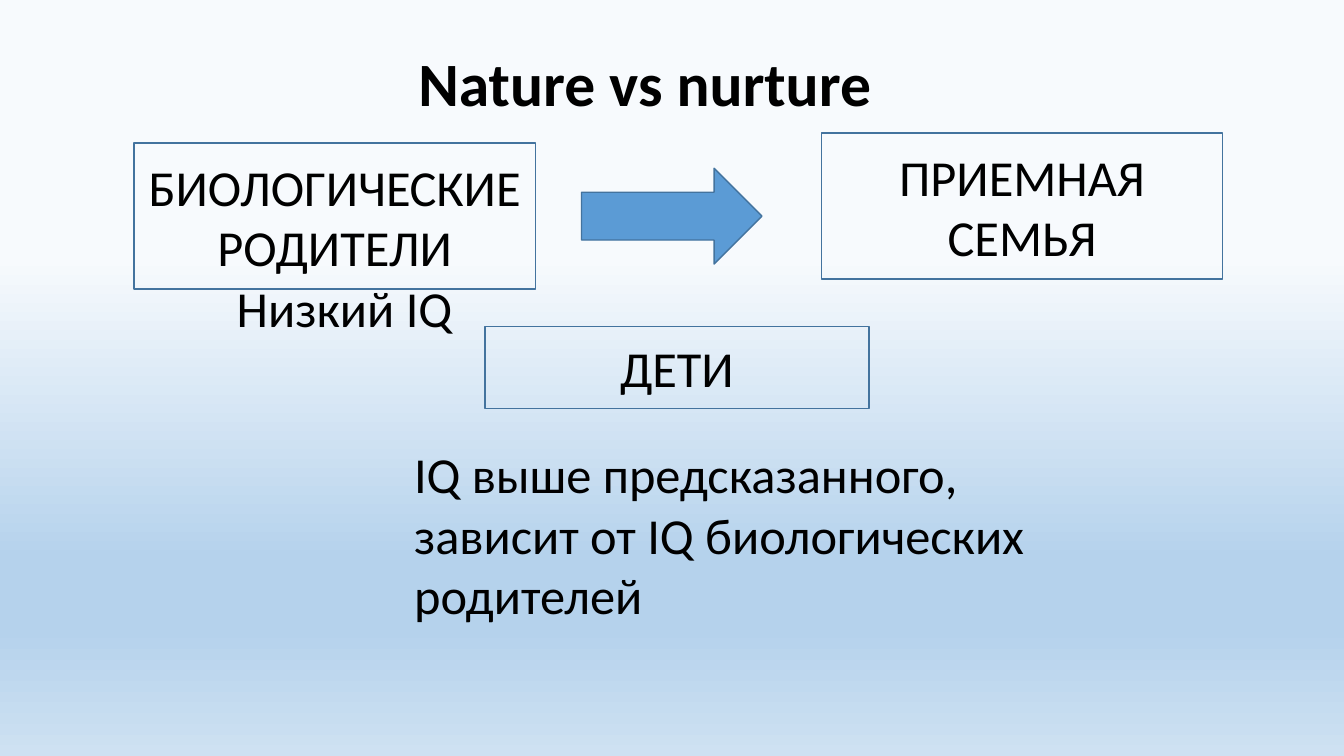
from dataclasses import dataclass

from lxml.etree import SubElement
from pptx import Presentation
from pptx.dml.color import RGBColor
from pptx.enum.shapes import MSO_SHAPE
from pptx.enum.text import MSO_ANCHOR, PP_ALIGN
from pptx.oxml.ns import qn
from pptx.util import Pt


@dataclass(frozen=True)
class Theme:
    font: str = "Calibri"
    title_size: int = 44
    body_size: int = 36
    ink: str = "000000"
    accent: str = "5B9BD5"
    outline: str = "43739E"
    sky: tuple = ((34, "F7FAFD"), (74, "B5D2EC"), (83, "B5D2EC"), (100, "CEE1F2"))


THEME = Theme()


def paint_background(slide):
    fill = slide.background.fill
    fill.gradient()
    fill.gradient_angle = 270
    stops = next(slide.element.iter(qn("a:gsLst")))
    for stop in list(stops):
        stops.remove(stop)
    for percent, color in THEME.sky:
        stop = SubElement(stops, qn("a:gs"), pos=str(percent * 1000))
        SubElement(stop, qn("a:srgbClr"), val=color)


def write(frame, text, size, align, anchor, bold=False):
    frame.word_wrap = True
    frame.vertical_anchor = anchor
    paragraph = frame.paragraphs[0]
    paragraph.text = text
    paragraph.alignment = align
    font = paragraph.font
    font.name = THEME.font
    font.size = Pt(size)
    font.bold = bold
    font.color.rgb = RGBColor.from_string(THEME.ink)
    return paragraph


def add_label(slide, text, bounds, size=THEME.body_size, align=PP_ALIGN.LEFT,
              anchor=MSO_ANCHOR.TOP, bold=False):
    label = slide.shapes.add_textbox(*map(Pt, bounds))
    return write(label.text_frame, text, size, align, anchor, bold)


def add_outlined(slide, preset, bounds):
    outlined = slide.shapes.add_shape(preset, *map(Pt, bounds))
    outlined.shadow.inherit = False
    outlined.fill.background()
    outlined.line.color.rgb = RGBColor.from_string(THEME.outline)
    outlined.line.width = Pt(1)
    return outlined


def add_group_box(slide, text, bounds):
    box = add_outlined(slide, MSO_SHAPE.RECTANGLE, bounds)
    write(box.text_frame, text, THEME.body_size, PP_ALIGN.CENTER, MSO_ANCHOR.MIDDLE)


def add_arrow(slide, bounds):
    arrow = add_outlined(slide, MSO_SHAPE.RIGHT_ARROW, bounds)
    arrow.fill.solid()
    arrow.fill.fore_color.rgb = RGBColor.from_string(THEME.accent)


def main():
    presentation = Presentation()
    presentation.slide_width = Pt(960)
    presentation.slide_height = Pt(540)
    slide = presentation.slides.add_slide(presentation.slide_layouts[6])
    paint_background(slide)

    title = add_label(slide, "Nature vs nurture", (46.8, 15.1, 828, 93.6),
                      THEME.title_size, PP_ALIGN.CENTER, MSO_ANCHOR.MIDDLE, True)
    title.line_spacing = 0.9

    add_arrow(slide, (415.4, 120.2, 128.9, 68.4))
    add_label(slide, "Низкий IQ", (162, 194.4, 188.6, 51.1))
    add_group_box(slide, "БИОЛОГИЧЕСКИЕ РОДИТЕЛИ", (95.8, 102.2, 286.6, 104.4))
    add_group_box(slide, "ДЕТИ", (346.3, 233.3, 274.3, 58.3))
    add_group_box(slide, "ПРИЕМНАЯ СЕМЬЯ", (586.8, 95, 286.6, 104.4))
    add_label(slide, "IQ выше предсказанного, зависит от IQ биологических родителей",
              (288.7, 313.2, 511.2, 138.2))

    presentation.save("out.pptx")


if __name__ == "__main__":
    main()
